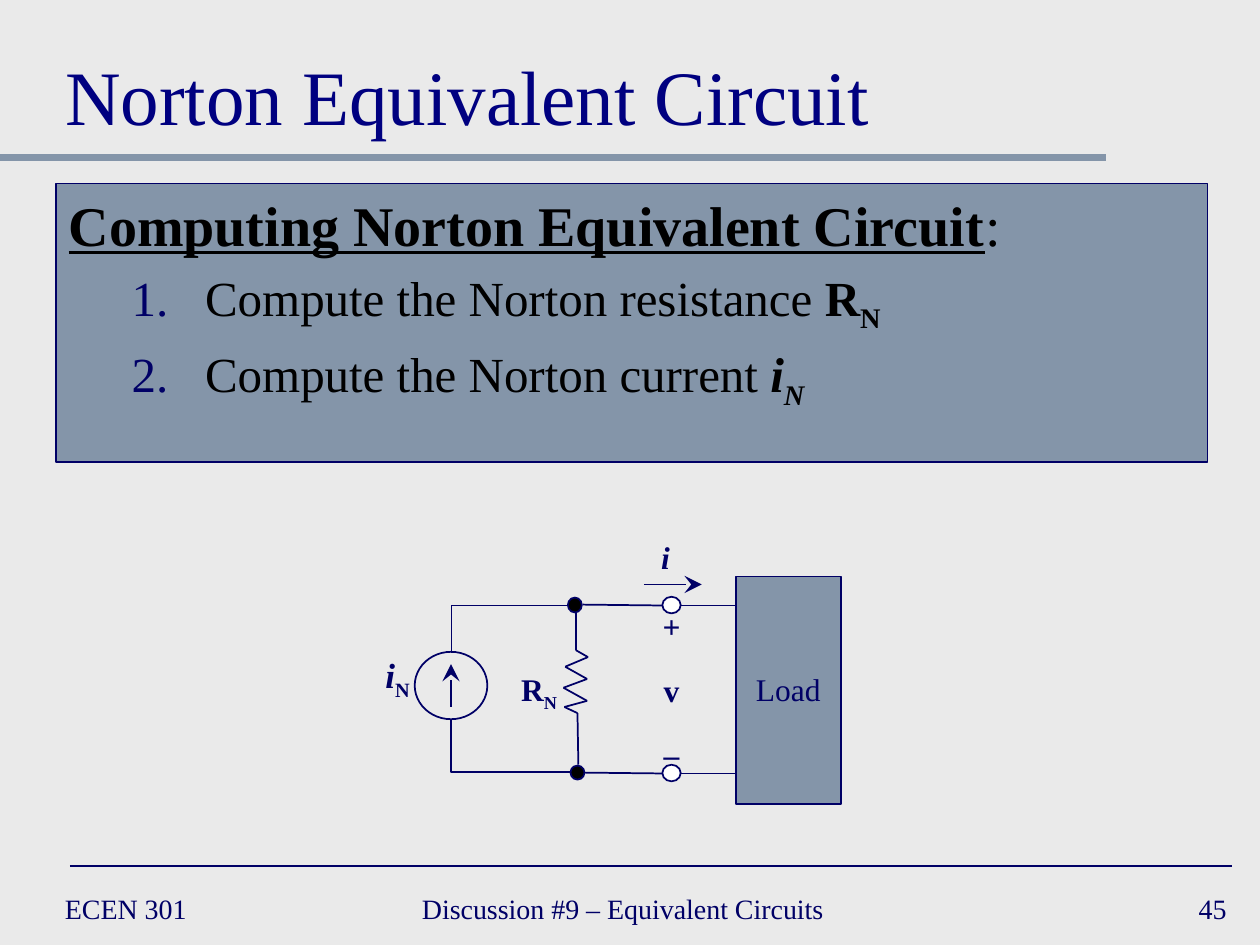
from itertools import pairwise
from lxml import etree
from pptx import Presentation
from pptx import util as u
from pptx.dml.color import RGBColor
from pptx.enum import shapes, text
from pptx.oxml import ns

Pt = u.Pt
FONT = "Times New Roman"
COL = {"navy": "000066", "title": "000080", "slate": "8495A9",
       "back": "EAEAEA", "black": "000000", "white": "FFFFFF"}
RGB = {name: RGBColor.from_string(code) for name, code in COL.items()}

deck = Presentation()
deck.slide_width, deck.slide_height = Pt(720), Pt(540)
slide = deck.slides.add_slide(deck.slide_layouts[1])
slide.background.fill.solid()
slide.background.fill.fore_color.rgb = RGB["back"]
items = slide.shapes


def wire(ends, color="navy", width=1, head=False, kind="STRAIGHT"):
    line = items.add_connector(shapes.MSO_CONNECTOR[kind], *map(Pt, ends))
    line.line.color.rgb = RGB[color]
    line.line.width = Pt(width)
    if head:
        etree.SubElement(line.line._get_or_add_ln(), ns.qn("a:tailEnd"),
                         type="stealth", w="lg", len="lg")
    etree.SubElement(line._element.spPr, ns.qn("a:effectLst"))
    return line


def label(box, rows, size, align="CENTER", wrap=False, gap=0):
    frame = items.add_textbox(*map(Pt, box)).text_frame
    frame.word_wrap = wrap
    if wrap:
        frame.vertical_anchor = text.MSO_ANCHOR.MIDDLE
    for i, row in enumerate(rows):
        para = frame.add_paragraph() if i else frame.paragraphs[0]
        para.alignment = text.PP_ALIGN[align]
        if i:
            para.space_before = Pt(gap)
        para.font.name, para.font.size = FONT, Pt(size)
        para.font.color.rgb = RGB["navy"]
        for words, style in row:
            run = para.add_run()
            run.text = words
            if "b" in style:
                run.font.bold = True
            if "i" in style:
                run.font.italic = True
            if "s" in style:
                run.font._element.set("baseline", "-25000")


wire((0, 90, 632, 90), "slate", 4)
wire((40, 495, 704, 495))
for left, width, words, align in [
        (30, 156, "ECEN 301", "LEFT"),
        (234, 276, "Discussion #9 – Equivalent Circuits", "LEFT"),
        (558, 150, "45", "RIGHT")]:
    label((left, 504, width, 30), [[(words, "")]], 16, align, True)

title = items.title
title.left, title.top, title.width, title.height = map(Pt, (30, 12, 660, 72))
title.text_frame.text = "Norton Equivalent Circuit"
title.text_frame.auto_size = text.MSO_AUTO_SIZE.NONE
title.text_frame.vertical_anchor = text.MSO_ANCHOR.BOTTOM
head = title.text_frame.paragraphs[0]
head.alignment = text.PP_ALIGN.LEFT
head.font.name, head.font.size = FONT, Pt(44)
head.font.color.rgb = RGB["title"]

body = slide.placeholders[1]
body.left, body.top, body.width, body.height = map(Pt, (32, 105, 658, 159))
body.fill.solid()
body.fill.fore_color.rgb = RGB["slate"]
body.line.color.rgb = RGB["navy"]
body.line.width = Pt(0.75)
frame = body.text_frame
frame.auto_size = text.MSO_AUTO_SIZE.NONE
steps = [
    (0, 32, [("Computing Norton Equivalent Circuit", "bu"), (":", "")]),
    (1, 28, [("Compute the Norton resistance ", ""), ("R", "b"), ("N", "bs")]),
    (1, 28, [("Compute the Norton current ", ""), ("i", "bi"), ("N", "bis")]),
]
for i, (level, size, row) in enumerate(steps):
    para = frame.add_paragraph() if i else frame.paragraphs[0]
    para.level = level
    props = para._p.get_or_add_pPr()
    left, indent = ((78, -42) if level else (48, -48))
    props.set("marL", str(Pt(left)))
    props.set("indent", str(Pt(indent)))
    if level:
        tint = etree.SubElement(props, ns.qn("a:buClr"))
        etree.SubElement(tint, ns.qn("a:srgbClr"), val=COL["navy"])
        etree.SubElement(props, ns.qn("a:buFont"), typeface=FONT)
        etree.SubElement(props, ns.qn("a:buAutoNum"), type="arabicPeriod")
    else:
        etree.SubElement(props, ns.qn("a:buNone"))
        para.space_before = Pt(0)
    para.font.name, para.font.size = FONT, Pt(size)
    para.font.color.rgb = RGB["black"]
    for words, style in row:
        run = para.add_run()
        run.text = words
        if "b" in style:
            run.font.bold = True
        if "i" in style:
            run.font.italic = True
        if "u" in style:
            run.font.underline = True
        if "s" in style:
            run.font._element.set("baseline", "-25000")

for kind, box, fill in [
        ("OVAL", (237, 372.5, 41.5, 38.5), None),
        ("OVAL", (378.5, 437, 10.5, 9.5), "white"),
        ("OVAL", (378.5, 341, 10.5, 9.5), "white"),
        ("OVAL", (326, 437.5, 8, 8), "black"),
        ("OVAL", (324.5, 341.5, 8, 8.5), "black"),
        ("RECTANGLE", (420.5, 329.5, 60, 130), "slate")]:
    part = items.add_shape(shapes.MSO_SHAPE[kind], *map(Pt, box))
    part.shadow.inherit = False
    if fill:
        part.fill.solid()
        part.fill.fore_color.rgb = RGB[fill]
    else:
        part.fill.background()
    part.line.color.rgb = RGB["navy"]
    part.line.width = Pt(1)

zigzag = [(329, 350), (329, 371.5), (336, 375.5), (323, 381), (335.5, 388),
          (322, 393), (335.5, 400.5), (322.5, 404), (330, 407.5), (330.5, 437)]
for start, end in pairwise(zigzag):
    wire(start + end)
for ends in [(334, 441.5, 378.5, 442), (333, 345.5, 378.5, 346),
             (389, 442, 420.5, 442), (389, 346, 420.5, 346)]:
    wire(ends)
for ends in [(307, 392, 276.75, 460.25), (278, 326, 305, 393)]:
    bend = wire(ends, kind="ELBOW")
    bend._element.spPr.find(ns.qn("a:xfrm")).set("rot", "16200000")
    bend._element.spPr.find(ns.qn("a:prstGeom")).set("prst", "bentConnector2")
wire((257.75, 404, 257.75, 379.5), head=True)
wire((368, 334, 401, 334), head=True)

label((212.5, 370, 29.5, 31), [[("i", "bi"), ("N", "bs")]], 20)
label((290, 379.5, 36, 29), [[("R", "b"), ("N", "bs")]], 18)
label((424.5, 379.5, 52, 29), [[("Load", "")]], 18)
label((371.5, 343.5, 24.5, 101), [[(sign, "b")] for sign in "+v–"], 18, gap=15)
label((370.5, 304, 19.5, 29), [[("i", "bi")]], 18)

deck.save("out.pptx")
